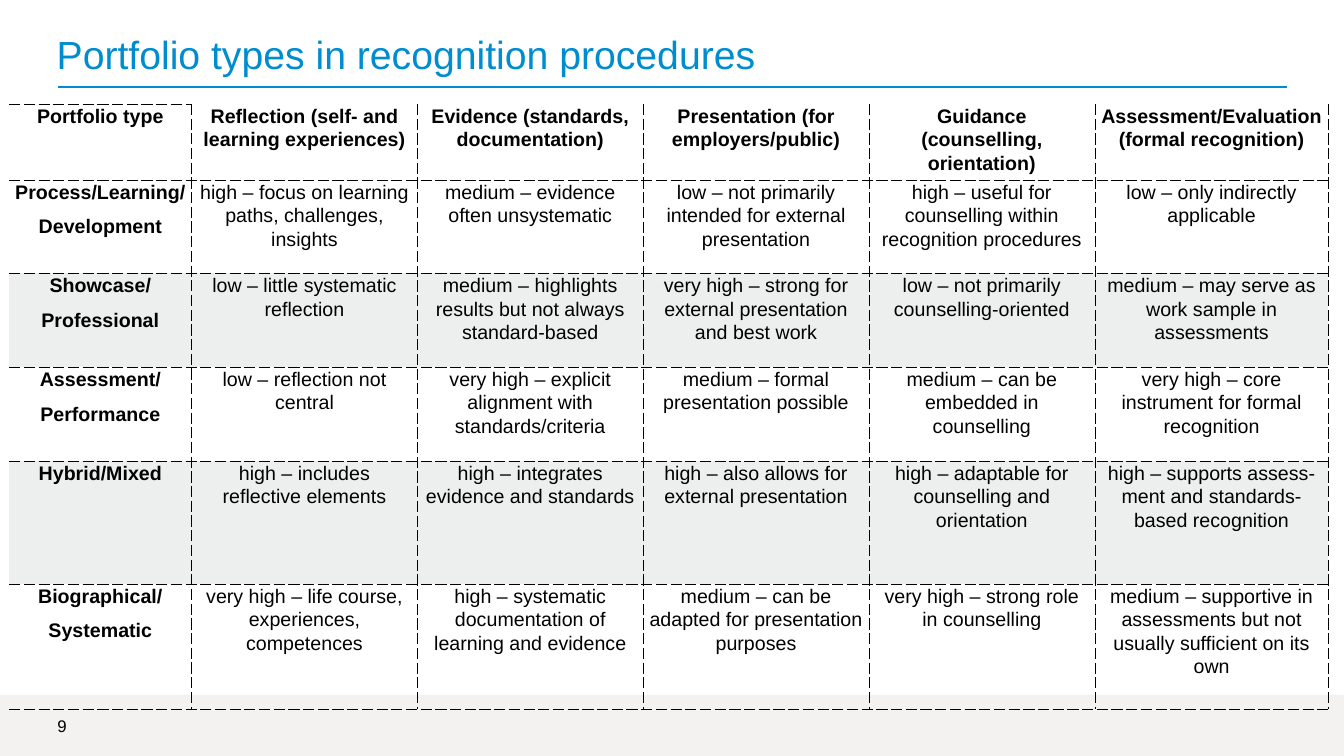
from lxml import etree
from pptx import Presentation
from pptx.dml.color import RGBColor
from pptx.enum.shapes import MSO_CONNECTOR, MSO_SHAPE
from pptx.enum.text import MSO_ANCHOR, PP_ALIGN
from pptx.oxml import parse_xml
from pptx.oxml.ns import nsdecls, qn
from pptx.util import Cm, Pt

BLUE = RGBColor(0x00, 0x8D, 0xD0)
BLACK = RGBColor(0x00, 0x00, 0x00)
BAND_GREY = RGBColor(0xED, 0xEE, 0xEE)
FOOTER_GREY = RGBColor(0x8A, 0x86, 0x7A)

ROWS = [
    ["Portfolio type", "Reflection (self- and learning experiences)",
     "Evidence (standards, documentation)", "Presentation (for employers/public)",
     "Guidance (counselling, orientation)", "Assessment/Evaluation (formal recognition)"],
    ["Process/Learning/\nDevelopment", "high – focus on learning paths, challenges, insights",
     "medium – evidence often unsystematic",
     "low – not primarily intended for external presentation",
     "high – useful for counselling within recognition procedures",
     "low – only indirectly applicable"],
    ["Showcase/\nProfessional", "low – little systematic reflection",
     "medium – highlights results but not always standard-based",
     "very high – strong for external presentation and best work",
     "low – not primarily counselling-oriented",
     "medium – may serve as work sample in assessments"],
    ["Assessment/\nPerformance", "low – reflection not central",
     "very high – explicit alignment with standards/criteria",
     "medium – formal presentation possible",
     "medium – can be embedded in counselling",
     "very high – core instrument for formal recognition"],
    ["Hybrid/Mixed", "high – includes reflective elements",
     "high – integrates evidence and standards",
     "high – also allows for external presentation",
     "high – adaptable for counselling and orientation",
     "high – supports assess-ment and standards-based recognition"],
    ["Biographical/\nSystematic", "very high – life course, experiences, competences",
     "high – systematic documentation of learning and evidence",
     "medium – can be adapted for presentation purposes",
     "very high – strong role in counselling",
     "medium – supportive in assessments but not usually sufficient on its own"],
]
COLUMN_WIDTHS = [4.6] + [5.69] * 4 + [5.89]
ROW_HEIGHTS = [1.91, 2.36, 2.36, 2.36, 3.1, 3.15]


def add_label(text, left, top, width, height, size, color):
    box = page.shapes.add_textbox(Cm(left), Cm(top), Cm(width), Cm(height))
    frame = box.text_frame
    frame.word_wrap = True
    frame.vertical_anchor = MSO_ANCHOR.MIDDLE
    frame.margin_left = frame.margin_right = frame.margin_top = frame.margin_bottom = 0
    frame.text = text
    font = frame.paragraphs[0].runs[0].font
    font.name, font.size, font.color.rgb = "Arial", Pt(size), color


def set_borders(cell, drawn):
    """Dash the sides named in drawn (L, R, T, B) and clear the others."""
    for side in "LRTB":
        if side in drawn:
            look = '<a:solidFill><a:srgbClr val="000000"/></a:solidFill><a:prstDash val="dash"/>'
        else:
            look = "<a:noFill/>"
        border = parse_xml(f'<a:ln{side} {nsdecls("a")} w="3175">{look}</a:ln{side}>')
        cell._tc.get_or_add_tcPr().append(border)


deck = Presentation()
deck.slide_width, deck.slide_height = Cm(33.87), Cm(19.05)
page = deck.slides.add_slide(deck.slide_layouts[6])

title_rule = page.shapes.add_connector(
    MSO_CONNECTOR.STRAIGHT, Cm(1.45), Cm(2.19), Cm(32.44), Cm(2.19))
title_rule.line.color.rgb = BLUE
title_rule.line.width = Pt(1.25)
etree.SubElement(title_rule._element.spPr, qn("a:effectLst"))

footer = page.shapes.add_shape(MSO_SHAPE.RECTANGLE, 0, Cm(17.52), Cm(33.9), Cm(1.55))
footer.shadow.inherit = False
footer.fill.solid()
footer.fill.fore_color.rgb = FOOTER_GREY
footer.line.fill.background()
footer_color = footer._element.spPr.find(qn("a:solidFill"))[0]
etree.SubElement(footer_color, qn("a:alpha"), val="10000")

add_label("Portfolio types in recognition procedures", 1.43, 0.71, 29.21, 1.3, 28, BLUE)
add_label("9", 1.45, 17.88, 1.52, 0.81, 12, BLACK)

table = page.shapes.add_table(
    len(ROWS), len(COLUMN_WIDTHS), Cm(0.23), Cm(2.62),
    Cm(sum(COLUMN_WIDTHS)), Cm(sum(ROW_HEIGHTS))).table
table.first_row = table.horz_banding = False
for column, width in zip(table.columns, COLUMN_WIDTHS):
    column.width = Cm(width)
for row, height in zip(table.rows, ROW_HEIGHTS):
    row.height = Cm(height)

for r, texts in enumerate(ROWS):
    for c, text in enumerate(texts):
        cell = table.cell(r, c)
        cell.margin_left = cell.margin_right = Cm(0.15)
        cell.margin_top = cell.margin_bottom = 0
        left = "L" if c > 0 else ""
        top = "T" if r > 0 or c == 0 else ""
        set_borders(cell, left + top + "RB")
        if r in (2, 4):
            cell.fill.solid()
            cell.fill.fore_color.rgb = BAND_GREY
        else:
            cell.fill.background()
        cell.text_frame.text = text
        for para in cell.text_frame.paragraphs:
            para.alignment = PP_ALIGN.CENTER
            para.line_spacing = 1.07
            para.space_after = Pt(8)
            font = para.runs[0].font
            font.name, font.size, font.color.rgb = "Arial", Pt(14), BLACK
            font.bold = r == 0 or c == 0

deck.save("out.pptx")
